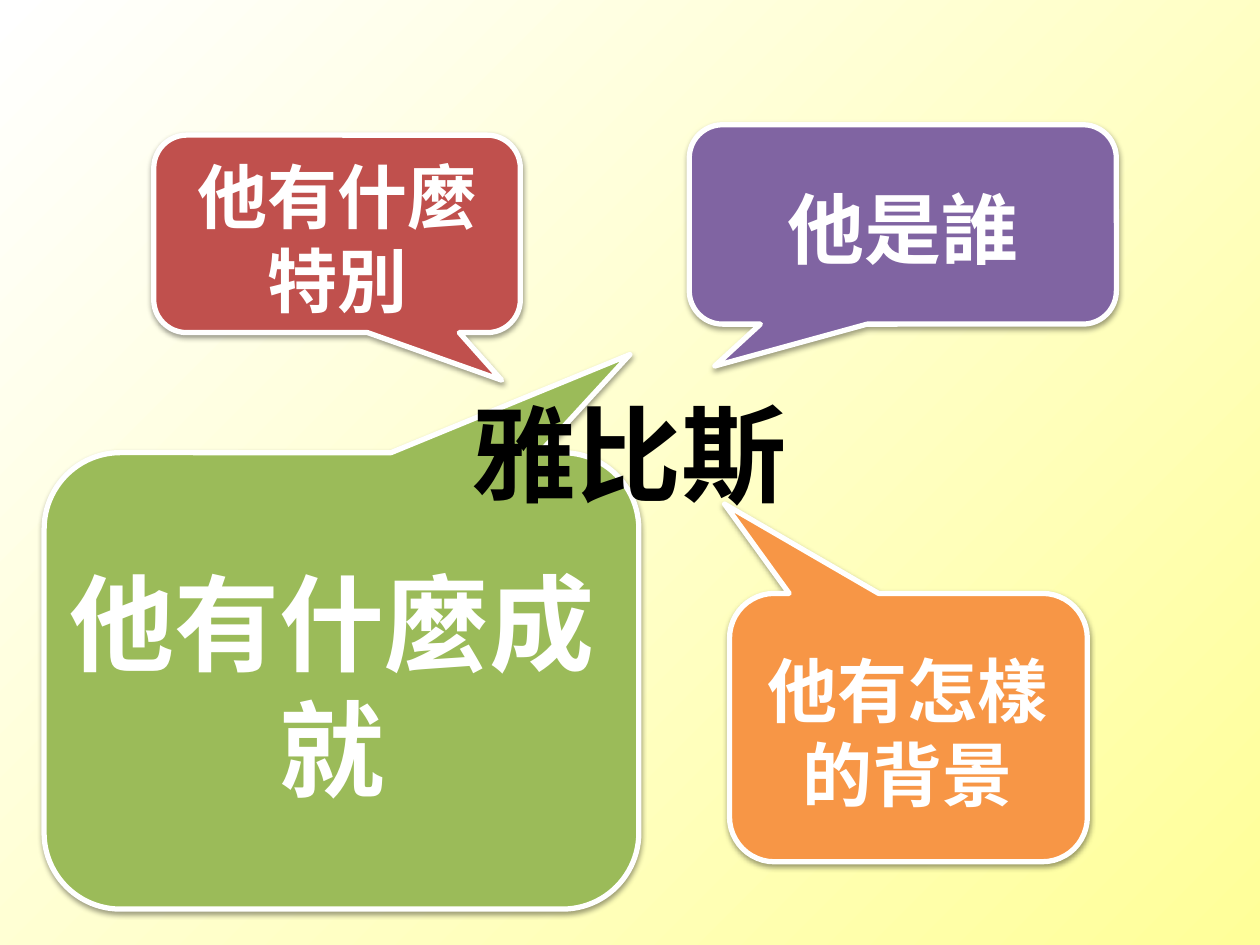
"""Build a slide of four question callouts around the name 雅比斯."""
from dataclasses import dataclass

from lxml.etree import SubElement
from pptx import Presentation
from pptx.dml.color import RGBColor
from pptx.enum.shapes import MSO_SHAPE
from pptx.enum.text import MSO_ANCHOR, MSO_AUTO_SIZE, PP_ALIGN
from pptx.oxml import parse_xml
from pptx.oxml.ns import nsdecls, qn
from pptx.util import Inches, Pt


@dataclass(frozen=True)
class Theme:
    font: str = "Noto Sans CJK SC"
    white: str = "FFFFFF"
    black: str = "000000"
    yellow: str = "FFFF99"
    green: str = "9BBB59"
    purple: str = "8064A2"
    red: str = "C0504D"
    orange: str = "F79646"
    large: int = 60
    medium: int = 44
    small: int = 40


THEME = Theme()
WIDTH, HEIGHT = 10, 7.5
LABEL_DROP = 0.03

TITLE = dict(text="雅比斯", left=0.358, top=0.405, width=0.283)
CALLOUTS = [
    dict(text="他有什麼成就", fill=THEME.green, size=THEME.large, lines=2,
         box=(0.035, 0.479, 0.472, 0.483), tip=(0.485, -0.715), label=(0.043, 0.441)),
    dict(text="他是誰", fill=THEME.purple, size=THEME.medium, lines=1,
         box=(0.547, 0.132, 0.339, 0.211), tip=(-0.44, 0.71), label=(0.571, 0.291)),
    dict(text="他有什麼特別", fill=THEME.red, size=THEME.small, lines=2,
         box=(0.122, 0.143, 0.291, 0.209), tip=(0.449, 0.741), label=(0.122, 0.291)),
    dict(text="他有怎樣的背景", fill=THEME.orange, size=THEME.small, lines=2,
         box=(0.579, 0.628, 0.284, 0.284), tip=(-0.514, -0.833), label=(0.594, 0.252)),
]


def rgb(value):
    return RGBColor.from_string(value)


def text_height(size, lines):
    return 0.1 + lines * size * 1.2 / 72


def place(sp, left, top, width, height):
    sp.left, sp.top = Inches(left), Inches(top)
    sp.width, sp.height = Inches(width), Inches(height)


def write(sp, text, size, color):
    tf = sp.text_frame
    tf.text = text
    tf.word_wrap = True
    tf.auto_size = MSO_AUTO_SIZE.SHAPE_TO_FIT_TEXT
    tf.vertical_anchor = MSO_ANCHOR.TOP
    p = tf.paragraphs[0]
    p.alignment = PP_ALIGN.CENTER
    r = p.runs[0]
    r.font.size, r.font.bold, r.font.name = Pt(size), True, THEME.font
    r.font.color.rgb = rgb(color)
    SubElement(r.font._element, qn("a:ea"), typeface=THEME.font)


def add_shadow(sp):
    sp.element.spPr.append(parse_xml(
        f'<a:effectLst {nsdecls("a")}>'
        f'<a:outerShdw blurRad="{Pt(3.1)}" dist="{Pt(1.6)}" dir="5400000" rotWithShape="0">'
        f'<a:srgbClr val="{THEME.black}"><a:alpha val="38000"/></a:srgbClr>'
        '</a:outerShdw></a:effectLst>'))


def add_callout(s, text, fill, size, lines, box, tip, label):
    left, top, width, height = (n * side for n, side in zip(box, (WIDTH, HEIGHT) * 2))
    sp = s.shapes.add_shape(MSO_SHAPE.ROUNDED_RECTANGULAR_CALLOUT, 0, 0, 0, 0)
    place(sp, left, top, width, height)
    for i, value in enumerate((*tip, 0.167)):
        sp.adjustments[i] = value
    sp.fill.solid()
    sp.fill.fore_color.rgb = rgb(fill)
    sp.line.color.rgb = rgb(THEME.white)
    sp.line.width = Pt(3)
    add_shadow(sp)

    label_left, label_width = (n * WIDTH for n in label)
    label_height = text_height(size, lines)
    label_top = top + (height - label_height) / 2 + LABEL_DROP
    tb = s.shapes.add_textbox(0, 0, 0, 0)
    place(tb, label_left, label_top, label_width, label_height)
    write(tb, text, size, THEME.white)
    return sp


def main():
    prs = Presentation()
    prs.slide_width, prs.slide_height = Inches(WIDTH), Inches(HEIGHT)
    s = prs.slides.add_slide(prs.slide_layouts[5])
    bg = s.background.fill
    bg.gradient()
    bg.gradient_angle = 315
    for stop, color in zip(bg.gradient_stops, (THEME.white, THEME.yellow)):
        stop.color.rgb = rgb(color)

    callouts = [add_callout(s, **item) for item in CALLOUTS]
    title = s.shapes.title
    place(title, TITLE["left"] * WIDTH, TITLE["top"] * HEIGHT,
          TITLE["width"] * WIDTH, text_height(THEME.large, 1))
    write(title, TITLE["text"], THEME.large, THEME.black)
    callouts[0].element.addnext(title.element)
    prs.save("out.pptx")


if __name__ == "__main__":
    main()
